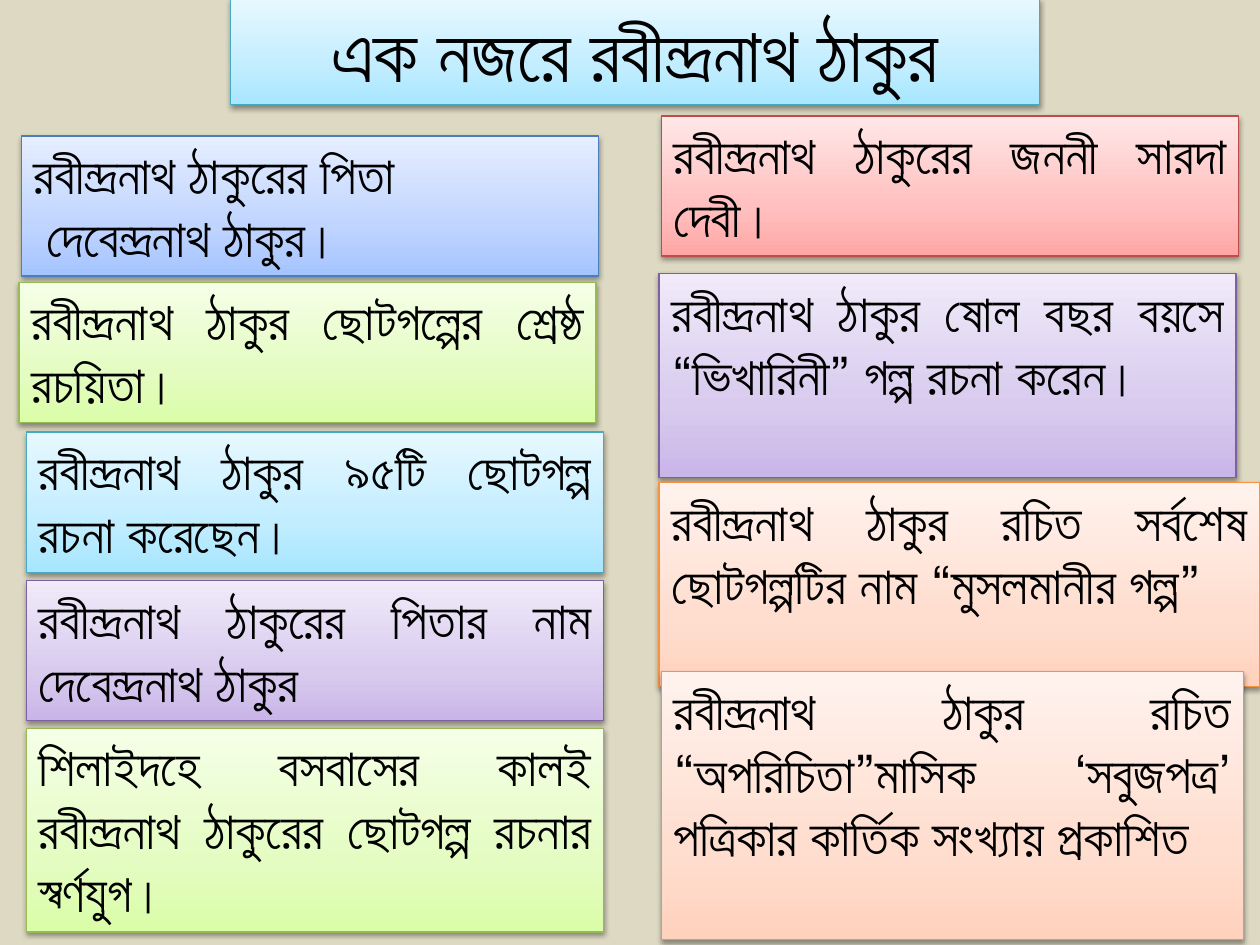
from lxml import etree
from pptx import Presentation
from pptx.dml.color import RGBColor
from pptx.enum.shapes import MSO_SHAPE
from pptx.enum.text import MSO_ANCHOR, MSO_AUTO_SIZE, PP_ALIGN
from pptx.oxml import parse_xml
from pptx.oxml.ns import nsdecls
from pptx.util import Inches, Pt

RECT = MSO_SHAPE.RECTANGLE
TOP = MSO_ANCHOR.TOP
GROW = MSO_AUTO_SIZE.SHAPE_TO_FIT_TEXT
MID, EVEN = PP_ALIGN.CENTER, PP_ALIGN.JUSTIFY
FONT = "Calibri"
CELL = 0.1
LINE, PAD = 5.06, 1

TONES = {
    "blue": ("A4C4FF", "BFD4FF", "E6EEFF", "4B7EBC"),
    "red": ("FFA6A5", "FFC0BF", "FFE7E7", "BF4C48"),
    "green": ("DAFDA7", "E4FCC2", "F5FFE7", "98B955"),
    "violet": ("C9B5E8", "D8CBEE", "F0EAF9", "7D60A0"),
    "aqua": ("A7E6FF", "C1EDFF", "E7F8FF", "46AAC5"),
    "orange": ("FFD2BD", "FFDED0", "FFF2ED", "F69240"),
}

LEFT = [
    (0.2, 3.6, 45.8, 2, "blue", ["রবীন্দ্রনাথ ঠাকুরের পিতা", "দেবেন্দ্রনাথ ঠাকুর।"]),
    (0, 15.2, 45.8, 2, "green", ["রবীন্দ্রনাথ ঠাকুর ছোটগল্পের শ্রেষ্ঠ রচয়িতা।"]),
    (0.6, 27.1, 45.8, 2, "aqua", ["রবীন্দ্রনাথ ঠাকুর ৯৫টি ছোটগল্প রচনা করেছেন।"]),
    (0.6, 38.9, 45.8, 2, "violet", ["রবীন্দ্রনাথ ঠাকুরের পিতার নাম দেবেন্দ্রনাথ ঠাকুর"]),
    (0.6, 50.6, 45.8, 3, "green",
     ["শিলাইদহে বসবাসের কালই রবীন্দ্রনাথ ঠাকুরের ছোটগল্প রচনার স্বর্ণযুগ।"]),
]
RIGHT = [
    (0.2, 2, 45.8, 2, "red", ["রবীন্দ্রনাথ ঠাকুরের জননী সারদা দেবী।"]),
    (0, 14.5, 45.8, 3, "violet", ["রবীন্দ্রনাথ ঠাকুর ষোল বছর বয়সে “ভিখারিনী” গল্প রচনা করেন।"]),
    (0, 31.1, 47.7, 3, "orange",
     ["রবীন্দ্রনাথ ঠাকুর রচিত সর্বশেষ ছোটগল্পটির নাম “মুসলমানীর গল্প”"]),
    (0.2, 46.1, 46.2, 4, "orange",
     ["রবীন্দ্রনাথ ঠাকুর রচিত “অপরিচিতা”মাসিক ‘সবুজপত্র’ পত্রিকার কার্তিক সংখ্যায় প্রকাশিত"]),
]


def tint(code):
    return RGBColor.from_string(code)


def span(cells):
    return Inches(cells * CELL)


def place(shape, box):
    shape.left, shape.top, shape.width, shape.height = map(span, box)


def paint(shape, tone):
    low, mid, high, edge = TONES[tone]
    props = shape.element.spPr
    stops = "".join(
        f'<a:gs pos="{pos}"><a:srgbClr val="{code}"/></a:gs>'
        for pos, code in ((0, low), (35000, mid), (100000, high))
    )
    props.append(parse_xml(
        f'<a:gradFill rotWithShape="1" {nsdecls("a")}><a:gsLst>{stops}</a:gsLst>'
        '<a:lin ang="16200000" scaled="1"/></a:gradFill>'
    ))
    shape.line.color.rgb = tint(edge)
    shape.line.width = Pt(0.75)
    props.append(parse_xml(
        f'<a:effectLst {nsdecls("a")}><a:outerShdw blurRad="40000" dist="20000" '
        'dir="5400000" rotWithShape="0"><a:srgbClr val="000000">'
        '<a:alpha val="38000"/></a:srgbClr></a:outerShdw></a:effectLst>'
    ))


def write(shape, lines, size, align):
    frame = shape.text_frame
    frame.text = "\n".join(lines)
    frame.word_wrap = True
    frame.vertical_anchor = TOP
    frame.auto_size = GROW
    for para in frame.paragraphs:
        para.alignment = align
        para.font.size = Pt(size)
        para.font.name = FONT
        para.font.color.rgb = tint("000000")
    for para in frame.paragraphs[1:]:
        para._p.get_or_add_pPr().set("marL", str(span(1)))


def head(slide, box):
    title = slide.shapes.title
    place(title, box)
    etree.SubElement(title.element.spPr, "{%s}prstGeom" % title.element.nsmap["a"], prst="rect")
    paint(title, "aqua")
    write(title, ["এক নজরে রবীন্দ্রনাথ ঠাকুর"], 44, MID)


def column(slide, left, top, cards):
    for dx, dy, width, rows, tone, lines in cards:
        box = left + dx, top + dy, width, PAD + rows * LINE
        card = slide.shapes.add_shape(RECT, *map(span, box))
        paint(card, tone)
        write(card, lines, 30, EVEN)


def main():
    deck = Presentation()
    deck.slide_width, deck.slide_height = span(100), span(75)
    slide = deck.slides.add_slide(deck.slide_layouts[5])
    fill = slide.background.fill
    fill.solid()
    fill.fore_color.rgb = tint("DDD9C3")
    head(slide, (18.3, -0.1, 64.2, 8.4))
    column(slide, 1.5, 7.2, LEFT)
    column(slide, 52.3, 7.2, RIGHT)
    deck.save("out.pptx")


if __name__ == "__main__":
    main()
